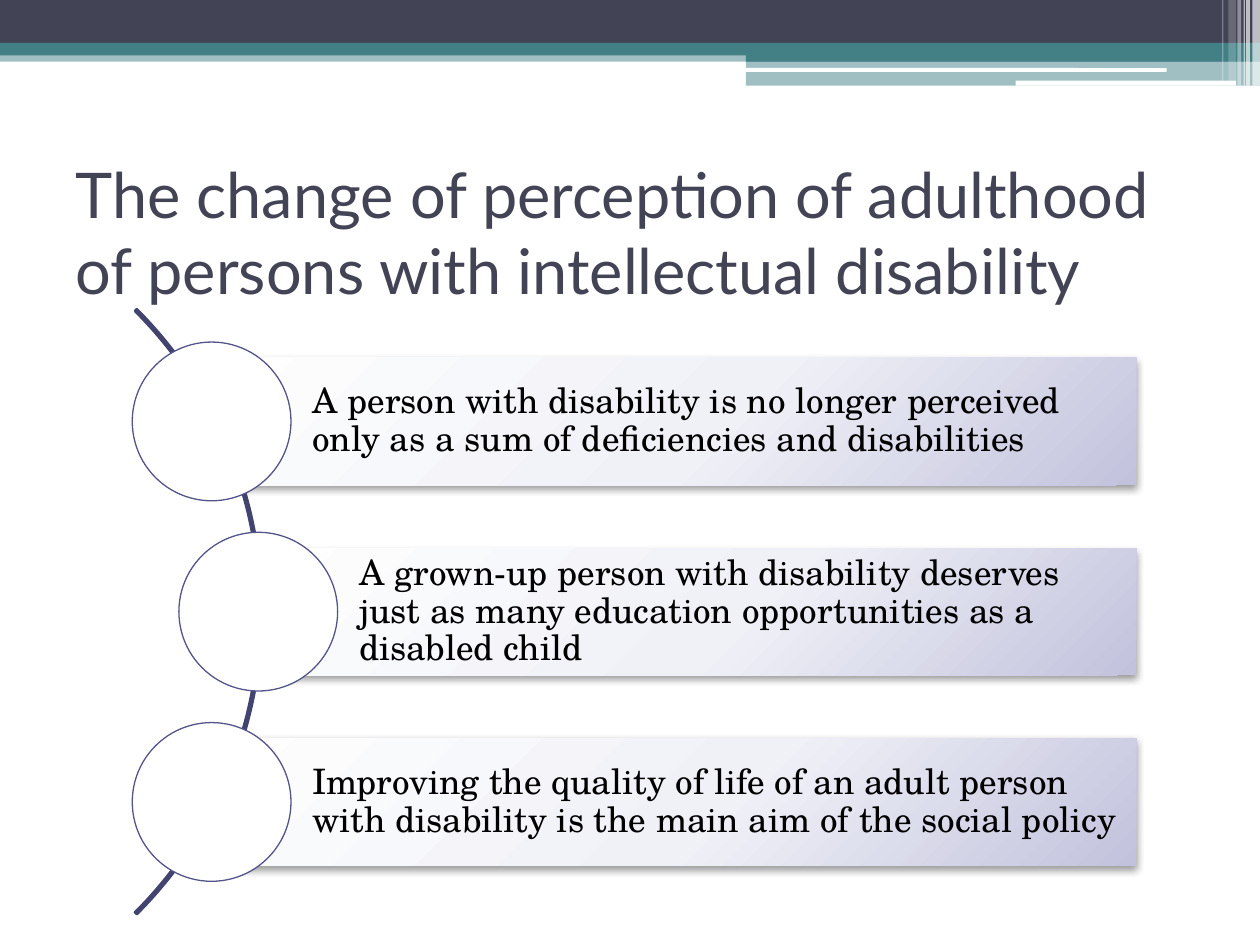
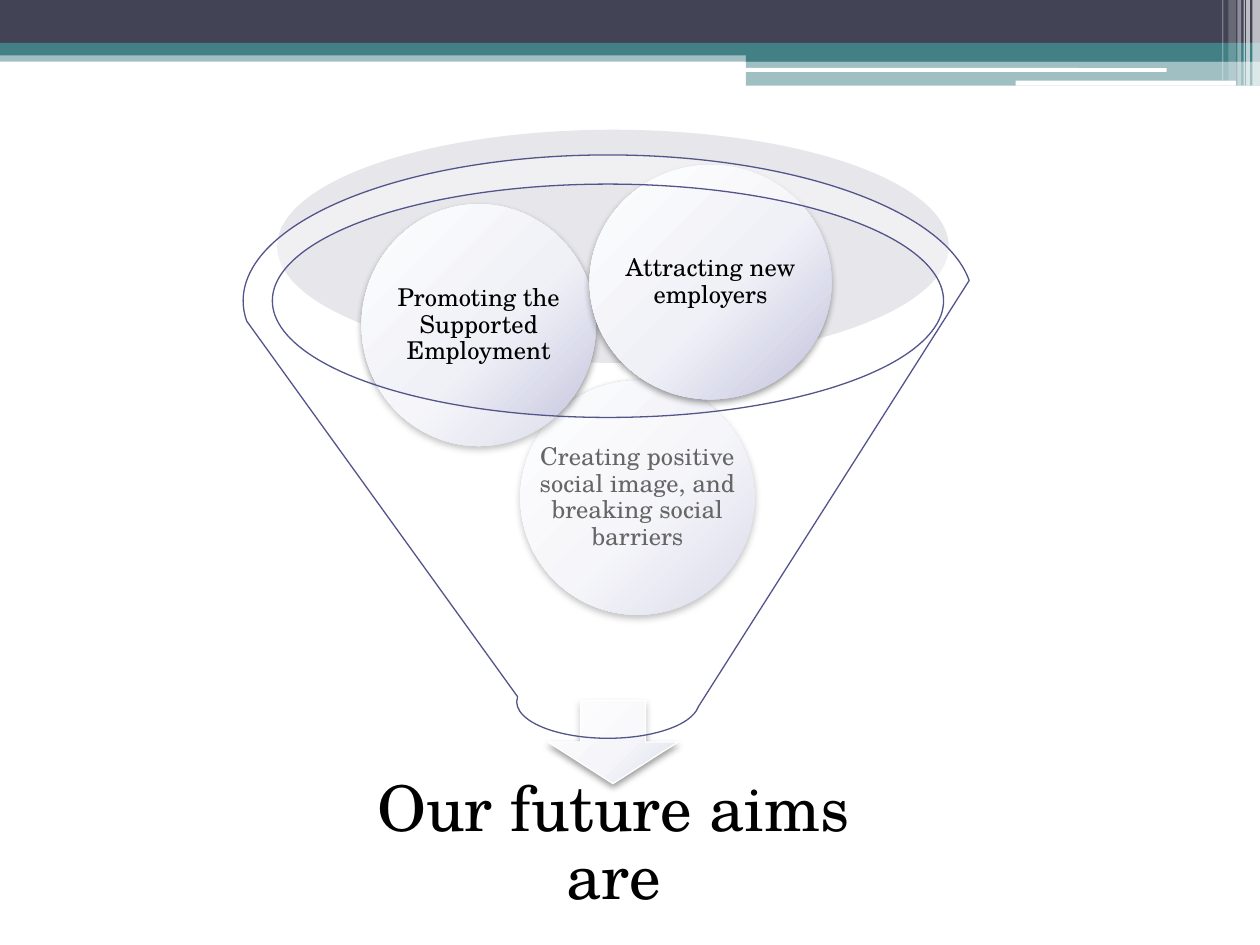
from dataclasses import dataclass

from pptx import Presentation
from pptx.dml.color import RGBColor
from pptx.enum.shapes import MSO_SHAPE
from pptx.enum.text import MSO_ANCHOR, MSO_AUTO_SIZE, PP_ALIGN
from pptx.oxml import parse_xml
from pptx.oxml.ns import nsdecls, qn
from pptx.util import Inches, Pt

# Content
TITLE = "The change of perception of adulthood of persons with intellectual disability"
# Bar left edge, text
PERCEPTIONS = [
    (1.68, "A person with disability is no longer perceived only as a sum of "
           "deficiencies and disabilities"),
    (2.05, "A grown-up person with disability deserves just as many education "
           "opportunities as a disabled child"),
    (1.68, "Improving the quality of life of an adult person with disability is "
           "the main aim of the social policy"),
]
# Left, top, width, height, text
AIMS = [
    (4.13, 3.02, 1.86, 1.86, "Creating positive social image, and breaking social barriers"),
    (2.87, 1.62, 1.86, 1.92, "Promoting the Supported Employment"),
    (4.68, 1.31, 1.92, 1.86, "Attracting new employers"),
]
CONCLUSION = "Our future aims are"


@dataclass(frozen=True)
class Theme:
    navy: str = "424456"
    teal: str = "438086"
    white: str = "FFFFFF"
    black: str = "000000"
    outline: str = "53548A"
    arc: str = "42436F"
    funnel_mouth: str = "C3C3CF"
    lilac: tuple = ((0, "FEFEFE"), (55, "F0F1F7"), (100, "C2C2DD"))
    pale_lilac: tuple = ((0, "FEFEFF"), (55, "F6F6FA"), (100, "DDDDEB"))
    title_font: str = "Lato"
    body_font: str = "TeX Gyre Schola"
    large: int = 36
    medium: int = 20
    small: int = 14


THEME = Theme()

# Header bands: left, top, width, height, colour, opacity in percent
BANDS = [
    (0, 0.4, 10, 0.09, THEME.teal, 50),
    (0, 0, 10, 0.34, THEME.navy, 100),
    (0, 0.34, 10, 0.1, THEME.teal, 100),
    (5.92, 0.39, 4.08, 0.1, THEME.teal, 100),
    (5.92, 0.48, 4.08, 0.2, THEME.teal, 50),
]
WHITE_LINES = [(5.91, 0.54, 3.35, 0.03), (8.06, 0.64, 1.75, 0.04)]
# White stripes at the right end: left, width, height, opacity
STRIPES = [
    (9.94, 0.06, 0.68, 65), (9.89, 0.03, 0.68, 65), (9.87, 0.01, 0.68, 60),
    (9.82, 0.03, 0.68, 40), (9.75, 0.06, 0.64, 20), (9.7, 0.01, 0.64, 30),
]


# Drawing helpers
def add_figure(slide, kind, area, color=None, opacity=100, line=None, line_width=0.75):
    figure = slide.shapes.add_shape(kind, *map(Inches, area))
    figure.shadow.inherit = False
    if color:
        figure.fill.solid()
        figure.fill.fore_color.rgb = RGBColor.from_string(color)
        if opacity < 100:
            color_node = figure.element.spPr.find(qn("a:solidFill"))[0]
            color_node.append(parse_xml(
                f'<a:alpha {nsdecls("a")} val="{opacity * 1000}"/>'))
    else:
        figure.fill.background()
    if line:
        figure.line.color.rgb = RGBColor.from_string(line)
        figure.line.width = Pt(line_width)
    else:
        figure.line.fill.background()
    return figure


def add_glossy(slide, kind, area, stops, line=None):
    """Add a shape with a radial gradient and a soft shadow below it."""
    figure = add_figure(slide, kind, area, line=line)
    properties = figure.element.spPr
    stop_nodes = "".join(
        f'<a:gs pos="{position * 1000}"><a:srgbClr val="{color}"/></a:gs>'
        for position, color in stops)
    gradient = parse_xml(
        f'<a:gradFill {nsdecls("a")} rotWithShape="1"><a:gsLst>{stop_nodes}</a:gsLst>'
        '<a:path path="circle">'
        '<a:fillToRect l="-40000" t="-90000" r="140000" b="190000"/>'
        '</a:path></a:gradFill>')
    properties.replace(properties.find(qn("a:noFill")), gradient)
    properties.find(qn("a:effectLst")).append(parse_xml(
        f'<a:outerShdw {nsdecls("a")} blurRad="{Pt(4.1)}" dist="{Pt(2)}" dir="5400000" '
        f'rotWithShape="0"><a:srgbClr val="{THEME.black}"><a:alpha val="40000"/>'
        '</a:srgbClr></a:outerShdw>'))
    return figure


def write(shape, text, size, color=THEME.black, font=THEME.body_font,
          align=PP_ALIGN.CENTER, insets=None, spacing=0.9):
    frame = shape.text_frame
    frame.text = text
    frame.word_wrap = True
    frame.auto_size = MSO_AUTO_SIZE.NONE
    frame.vertical_anchor = MSO_ANCHOR.MIDDLE
    if insets:
        (frame.margin_left, frame.margin_top,
         frame.margin_right, frame.margin_bottom) = map(Inches, insets)
    para = frame.paragraphs[0]
    para.alignment = align
    para.line_spacing = spacing
    span = para.runs[0]
    span.font.name = font
    span.font.size = Pt(size)
    span.font.color.rgb = RGBColor.from_string(color)


def add_label(slide, area, text, size, inset):
    box = slide.shapes.add_textbox(*map(Inches, area))
    write(box, text, size, insets=[inset] * 4)


# Shared header, moved to the slide master
def build_header(deck, slide):
    parts = [add_figure(slide, MSO_SHAPE.RECTANGLE, area, color, opacity)
             for *area, color, opacity in BANDS]
    parts += [add_figure(slide, MSO_SHAPE.ROUNDED_RECTANGLE, area, THEME.white)
              for area in WHITE_LINES]
    parts += [add_figure(slide, MSO_SHAPE.RECTANGLE, (left, 0, width, height),
                         THEME.white, opacity)
              for left, width, height, opacity in STRIPES]
    master_tree = deck.slide_master.shapes.element
    for index, part in enumerate(parts):
        part.element.nvSpPr.cNvPr.set("id", str(100 + index))
        master_tree.insert(2 + index, part.element)


# Slide 1: bars hung on an arc
def build_perceptions(slide):
    title = slide.shapes.title
    title.left, title.top, title.width, title.height = map(Inches, (0.5, 1.25, 9, 1.17))
    write(title, TITLE, THEME.large, THEME.navy, THEME.title_font, PP_ALIGN.LEFT, spacing=1.0)

    arc = add_figure(slide, MSO_SHAPE.BLOCK_ARC, (-4.71, 1.46, 6.79, 6.79),
                     line=THEME.arc, line_width=1.5)
    for index, value in enumerate((189, 27, 0.003)):
        arc.adjustments[index] = value

    first_top, step, bar_height, bar_right, diameter = 2.84, 1.51, 1.01, 9.02, 1.26
    for index, (left, text) in enumerate(PERCEPTIONS):
        top = first_top + index * step
        bar = add_glossy(slide, MSO_SHAPE.RECTANGLE,
                         (left, top, bar_right - left, bar_height), THEME.lilac)
        write(bar, text, THEME.medium, align=PP_ALIGN.LEFT, insets=(0.8, 0.06, 0.06, 0.06))
        circle_top = top + (bar_height - diameter) / 2
        add_figure(slide, MSO_SHAPE.OVAL,
                   (left - diameter / 2, circle_top, diameter, diameter),
                   THEME.white, line=THEME.outline)


# Slide 2: aims falling through a funnel
def build_funnel(slide):
    add_figure(slide, MSO_SHAPE.OVAL, (2.2, 1.03, 5.33, 1.85), THEME.funnel_mouth, 40)
    add_glossy(slide, MSO_SHAPE.DOWN_ARROW, (4.35, 5.56, 1.03, 0.66),
               THEME.pale_lilac, THEME.white)
    add_label(slide, (2.39, 6.09, 4.96, 1.24), CONCLUSION, THEME.large, 0.28)
    for *area, text in AIMS:
        add_glossy(slide, MSO_SHAPE.OVAL, area, THEME.lilac)
        add_label(slide, area, text, THEME.small, 0.02)
    add_figure(slide, MSO_SHAPE.FUNNEL, (1.93, 1.23, 5.79, 4.63),
               THEME.white, 40, THEME.outline)


def main():
    deck = Presentation()
    deck.slide_width, deck.slide_height = Inches(10), Inches(7.5)
    title_only, blank = deck.slide_layouts[5], deck.slide_layouts[6]
    perceptions = deck.slides.add_slide(title_only)
    build_header(deck, perceptions)
    build_perceptions(perceptions)
    build_funnel(deck.slides.add_slide(blank))
    deck.save("out.pptx")


if __name__ == "__main__":
    main()
